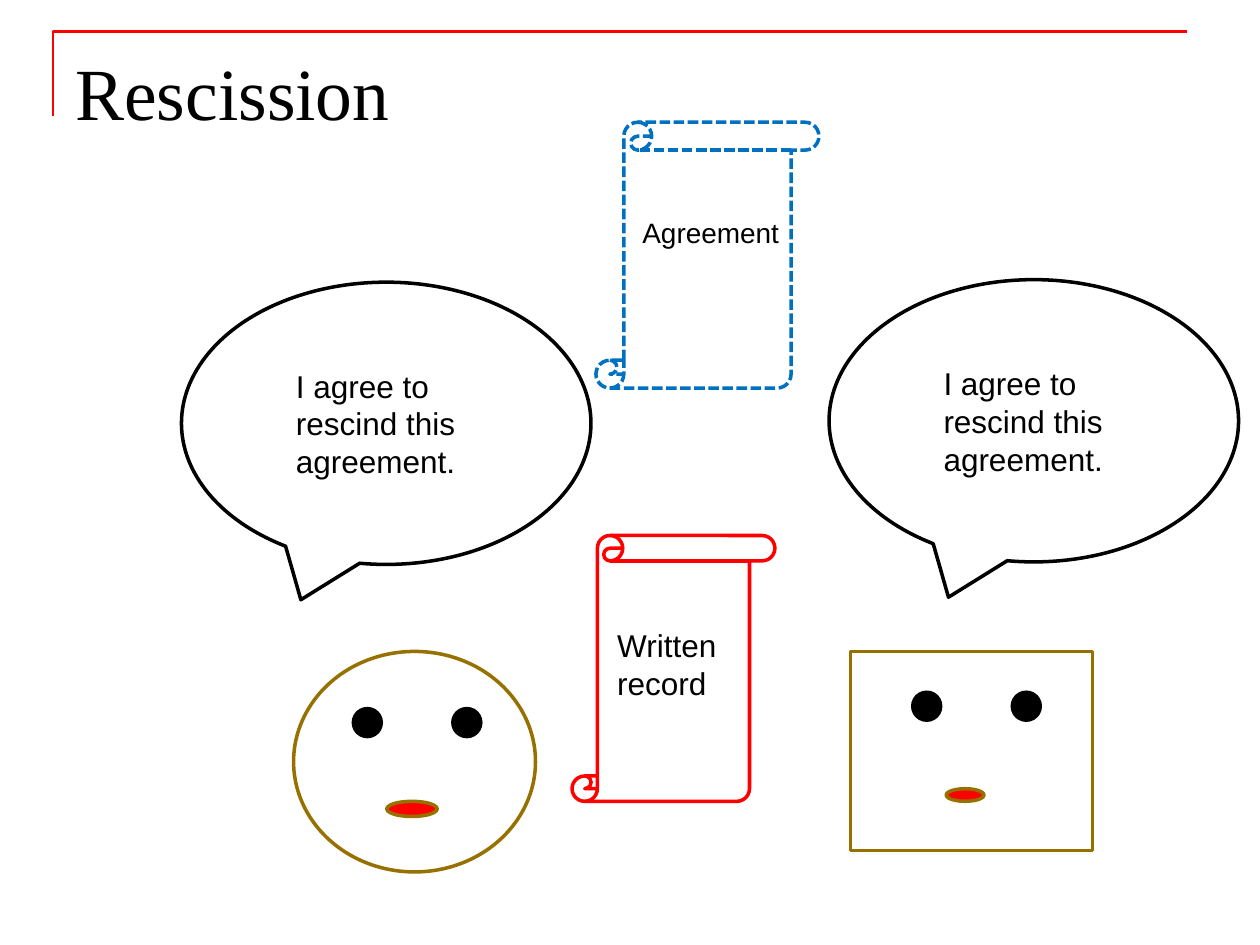
import pptx
import pptx.util
import pptx.dml.color
import pptx.enum.dml
import pptx.enum.shapes
import pptx.enum.text

Inches = pptx.util.Inches
Pt = pptx.util.Pt
RGBColor = pptx.dml.color.RGBColor
SHAPE = pptx.enum.shapes.MSO_SHAPE

BLACK = RGBColor(0x00, 0x00, 0x00)
RED = RGBColor(0xFF, 0x00, 0x00)
BLUE = RGBColor(0x00, 0x70, 0xC0)
OCHRE = RGBColor(0x97, 0x71, 0x00)

deck = pptx.Presentation()
deck.slide_width, deck.slide_height = Inches(10), Inches(7.5)
slide = deck.slides.add_slide(deck.slide_layouts[6])


def add_figure(kind, left, top, width, height, fill=None, line=None):
    figure = slide.shapes.add_shape(
        kind, Inches(left), Inches(top), Inches(width), Inches(height))
    figure.shadow.inherit = False
    if fill is None:
        figure.fill.background()
    else:
        figure.fill.solid()
        figure.fill.fore_color.rgb = fill
    if line is None:
        figure.line.fill.background()
    else:
        figure.line.color.rgb = line
        figure.line.width = Pt(2)
    return figure


def add_label(words, left, top, width, height, size, font="Arial"):
    label = slide.shapes.add_textbox(
        Inches(left), Inches(top), Inches(width), Inches(height))
    frame = label.text_frame
    frame.word_wrap = True
    frame.vertical_anchor = pptx.enum.text.MSO_ANCHOR.TOP
    run = frame.paragraphs[0].add_run()
    run.text = words
    run.font.size = Pt(size)
    run.font.name = font
    run.font.color.rgb = BLACK
    return frame


# Corner rule and title
outline = slide.shapes.build_freeform(Inches(0.42), Inches(0.92), scale=1.0)
outline.add_line_segments(
    [(Inches(0.42), Inches(0.25)), (Inches(9.42), Inches(0.25))], close=False)
corner_rule = outline.convert_to_shape()
corner_rule.shadow.inherit = False
corner_rule.fill.background()
corner_rule.line.color.rgb = RED
corner_rule.line.width = Pt(1.5)

title = add_label("Rescission", 0.5, 0.26, 9, 1.25, 42, "Times New Roman")
title.margin_top = Inches(0.11)

# Two parties: head, eyes and mouth
parties = [
    (SHAPE.OVAL, (2.33, 5.17, 1.92, 1.75), (2.79, 5.61), (3.07, 6.36, 0.4, 0.12)),
    (SHAPE.RECTANGLE, (6.75, 5.17, 1.92, 1.58), (7.23, 5.48), (7.51, 6.26, 0.3, 0.1)),
]
for head_kind, head, (eye_left, eye_top), mouth in parties:
    add_figure(head_kind, *head, line=OCHRE)
    for offset in (0, 0.79):
        add_figure(SHAPE.OVAL, eye_left + offset, eye_top, 0.25, 0.25, fill=BLACK)
    add_figure(SHAPE.OVAL, *mouth, fill=RED, line=OCHRE)

# What each party says
for left, top in [(1.44, 2.24), (6.58, 2.22)]:
    add_label("I agree to rescind this agreement.",
              left + 0.81, top + 0.62, 1.83, 1.01, 18)
    add_figure(SHAPE.OVAL_CALLOUT, left, top, 3.25, 2.24, line=BLACK)

# Written record
add_figure(SHAPE.VERTICAL_SCROLL, 4.54, 4.25, 1.61, 2.11, line=RED)
add_label("Written record", 4.8, 4.92, 1.35, 0.71, 18)

# Rescinded agreement, dashed
agreement = add_figure(SHAPE.VERTICAL_SCROLL, 4.73, 0.97, 1.77, 2.11, line=BLUE)
agreement.line.dash_style = pptx.enum.dml.MSO_LINE.SQUARE_DOT
add_label("Agreement", 5, 1.66, 1.35, 0.37, 16)

deck.save("out.pptx")
